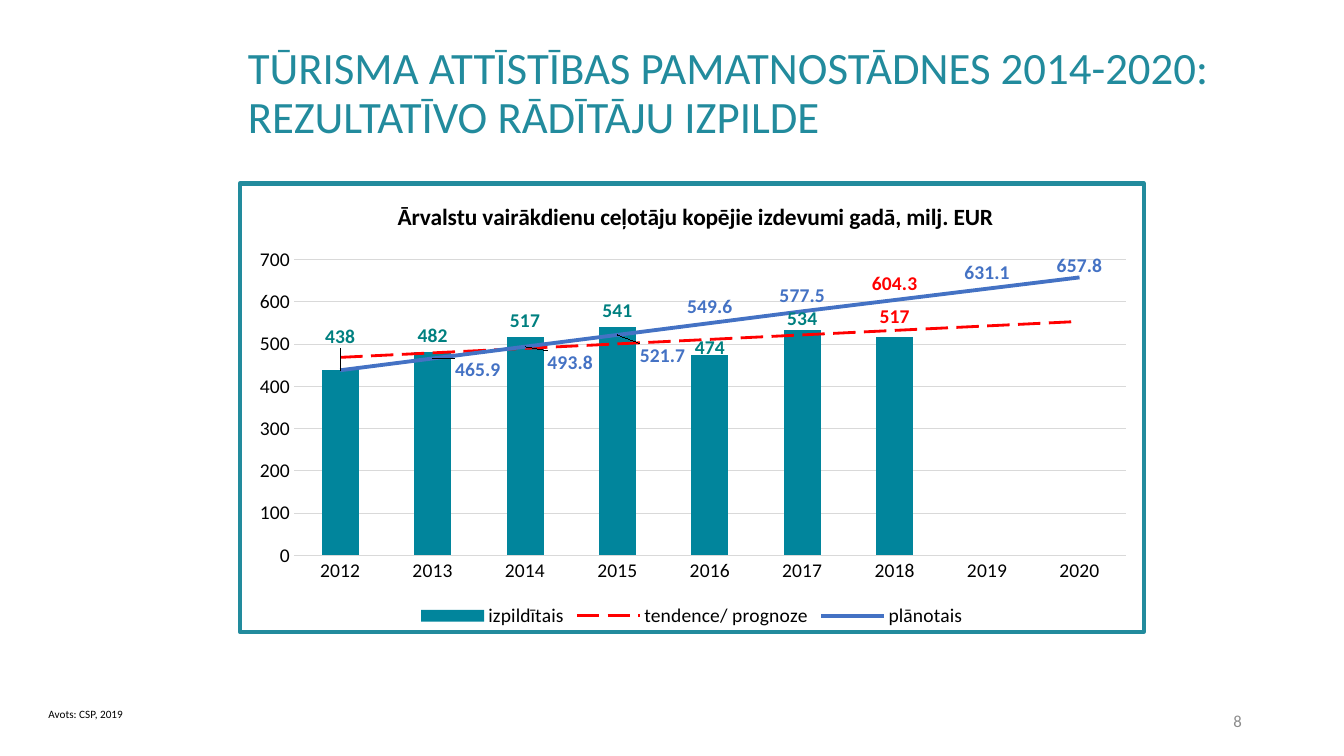
from dataclasses import dataclass

from lxml import etree
from pptx import Presentation
from pptx import util as u
from pptx.chart.data import CategoryChartData
from pptx.dml.color import RGBColor
from pptx.enum import chart as ch, dml, text
from pptx.oxml import parse_xml
from pptx.oxml.ns import nsdecls, qn

TEAL, GREEN, RED, BLUE, GRID = "228B9D", "008080", "FF0000", "4472C4", "D9D9D9"
ABOVE, BELOW = ch.XL_LABEL_POSITION.ABOVE, ch.XL_LABEL_POSITION.BELOW
OUTER = ch.XL_LABEL_POSITION.OUTSIDE_END


@dataclass
class Box:
    left: float
    top: float
    width: float
    height: float

    def cm(self) -> list:
        return [u.Cm(n) for n in (self.left, self.top, self.width, self.height)]


@dataclass
class Note:
    words: str
    box: Box
    size: float
    color: str
    align: text.PP_ALIGN
    anchor: text.MSO_ANCHOR


@dataclass
class Label:
    point: int
    place: ch.XL_LABEL_POSITION
    color: str
    dx: float = 0
    dy: float = 0


def rgb(code: str) -> RGBColor:
    return RGBColor.from_string(code)


def style(font, size: float, color: str, bold: bool = False) -> None:
    font.name, font.size, font.bold = "Calibri", u.Pt(size), bold
    font.color.rgb = rgb(color)


def write(frame, words: str, *, size: float, color: str, bold: bool = False,
          align=text.PP_ALIGN.LEFT, anchor=text.MSO_ANCHOR.TOP,
          space: float = 1.0) -> None:
    frame.word_wrap = True
    frame.auto_size = text.MSO_AUTO_SIZE.NONE
    frame.vertical_anchor = anchor
    para = frame.paragraphs[0]
    para.text, para.alignment, para.line_spacing = words, align, space
    for run in para.runs:
        style(run.font, size, color, bold)


def layout(x: float, y: float, w: float = 0, h: float = 0,
           mode: str = "") -> etree.ElementBase:
    inner = '<c:layoutTarget val="inner"/>' if w else ""
    modes = "".join(f'<c:{a}Mode val="{mode}"/>' for a in "xy") if mode else ""
    size = f'<c:w val="{w}"/><c:h val="{h}"/>' if w else ""
    return parse_xml(
        f'<c:layout {nsdecls("c")}><c:manualLayout>{inner}{modes}'
        f'<c:x val="{x}"/><c:y val="{y}"/>{size}</c:manualLayout></c:layout>')


def clear(node, tag: str) -> None:
    for child in node.findall(qn(tag)):
        node.remove(child)


def mark(series, labels: list[Label]) -> None:
    for item in labels:
        label = series.points[item.point].data_label
        style(label.font, 14, item.color, True)
        label.position = item.place
        if item.dx or item.dy:
            node = next(n for n in series.data_labels._element.findall(qn("c:dLbl"))
                        if n.find(qn("c:idx")).get("val") == str(item.point))
            node.insert(1, layout(item.dx, item.dy))


def trend(series) -> None:
    node = parse_xml(
        f'<c:trendline {nsdecls("c", "a")}><c:name>tendence/ prognoze</c:name>'
        f'<c:spPr><a:ln w="25400"><a:solidFill><a:srgbClr val="{RED}"/></a:solidFill>'
        '<a:prstDash val="lgDash"/></a:ln></c:spPr><c:trendlineType val="linear"/>'
        '<c:dispRSqr val="0"/><c:dispEq val="0"/></c:trendline>')
    series._element.find(qn("c:cat")).addprevious(node)


def split(chart) -> None:
    """Move the second series from the columns to a line plot."""
    bars = chart._chartSpace.find(".//" + qn("c:barChart"))
    line = parse_xml(
        f'<c:lineChart {nsdecls("c")}><c:grouping val="standard"/>'
        '<c:varyColors val="0"/><c:marker val="1"/></c:lineChart>')
    plan = bars.findall(qn("c:ser"))[1]
    clear(plan, "c:invertIfNegative")
    line.insert(2, plan)
    for axis in bars.findall(qn("c:axId")):
        etree.SubElement(line, qn("c:axId")).set("val", axis.get("val"))
    bars.addnext(line)


def draw(slide, box: Box) -> None:
    data = CategoryChartData()
    data.categories = [str(year) for year in range(2012, 2021)]
    data.add_series("izpildītais", [438, 482, 517, 541, 474, 534, 517, None, None])
    data.add_series("plānotais", [438, 465.9, 493.8, 521.7, 549.6, 577.5,
                                  604.3, 631.1, 657.8])
    chart = slide.shapes.add_chart(ch.XL_CHART_TYPE.COLUMN_CLUSTERED,
                                   *box.cm(), data).chart
    style(chart.font, 14, "000000")
    split(chart)

    # Title, legend and frame
    write(chart.chart_title.text_frame,
          "Ārvalstu vairākdienu ceļotāju kopējie izdevumi gadā, milj. EUR",
          size=16.8, color="000000", bold=True, align=text.PP_ALIGN.CENTER)
    head = chart.chart_title._element
    clear(head, "c:layout")
    head.find(qn("c:tx")).addnext(layout(0.17, 0.03, mode="edge"))
    chart.has_legend = True
    chart.legend.position = ch.XL_LEGEND_POSITION.BOTTOM
    chart.legend.include_in_layout = False
    style(chart.legend.font, 14, "000000")
    area = chart._chartSpace.find(".//" + qn("c:plotArea"))
    clear(area, "c:layout")
    area.insert(0, layout(0.06, 0.17, 0.92, 0.66, "edge"))
    chart._chartSpace.find(qn("c:chart")).addnext(parse_xml(
        f'<c:spPr {nsdecls("c", "a")}><a:noFill/><a:ln w="38100"><a:solidFill>'
        f'<a:srgbClr val="{TEAL}"/></a:solidFill></a:ln></c:spPr>'))

    # Axes
    cats, vals = chart.category_axis, chart.value_axis
    for axis in (cats, vals):
        axis.major_tick_mark = axis.minor_tick_mark = ch.XL_TICK_MARK.NONE
        style(axis.tick_labels.font, 14, "000000")
    cats.format.line.color.rgb = rgb(GRID)
    cats.format.line.width = u.Pt(1)
    vals.format.line.fill.background()
    vals.minimum_scale, vals.maximum_scale, vals.major_unit = 0, 700, 100
    vals.tick_labels.number_format = "#,##0"
    vals.tick_labels.number_format_is_linked = False
    grid = vals.major_gridlines.format.line
    grid.color.rgb, grid.width = rgb(GRID), u.Pt(0.75)

    # Columns with their trend
    bars = chart.plots[0]
    bars.gap_width, bars.vary_by_categories = 150, False
    done, plan = bars.series[0], chart.plots[1].series[0]
    done.format.fill.solid()
    done.format.fill.fore_color.rgb = rgb("01859C")
    tags = done.data_labels
    tags.show_value, tags.position = True, OUTER
    style(tags.font, 14, GREEN, True)
    mark(done, [Label(0, OUTER, GREEN, 0, -0.04), Label(4, OUTER, GREEN, 0, 0.02),
                Label(5, OUTER, GREEN, 0, 0.01), Label(6, OUTER, RED, 0, -0.01)])
    trend(done)

    # Planned line: early labels sit in the gaps between columns
    plan.smooth = False
    plan.marker.style = ch.XL_MARKER_STYLE.NONE
    plan.format.line.color.rgb = rgb(BLUE)
    plan.format.line.width = u.Pt(2.75)
    plan.format.line.dash_style = dml.MSO_LINE.SOLID
    plan.data_labels.show_value = False
    mark(plan, [Label(1, BELOW, BLUE, 0.05, -0.01), Label(2, BELOW, BLUE, 0.05),
                Label(3, BELOW, BLUE, 0.05, 0.01), Label(4, ABOVE, BLUE),
                Label(5, ABOVE, BLUE), Label(6, ABOVE, RED),
                Label(7, ABOVE, BLUE), Label(8, ABOVE, BLUE, 0, 0.01)])


def main() -> None:
    deck = Presentation()
    deck.slide_width, deck.slide_height = u.Cm(33.87), u.Cm(19.05)
    slide = deck.slides.add_slide(deck.slide_layouts[5])

    # Title
    title = slide.shapes.title
    title.left, title.top, title.width, title.height = Box(5.99, 0.05, 27.66, 3.68).cm()
    write(title.text_frame,
          "TŪRISMA ATTĪSTĪBAS PAMATNOSTĀDNES 2014-2020:\vREZULTATĪVO RĀDĪTĀJU IZPILDE",
          size=32, color=TEAL, anchor=text.MSO_ANCHOR.BOTTOM, space=0.9)

    draw(slide, Box(5.99, 4.57, 22.89, 11.4))

    # Source and page number
    for note in (
        Note("Avots: CSP, 2019", Box(0.97, 17.7, 4.06, 0.61), 8, "000000",
             text.PP_ALIGN.LEFT, text.MSO_ANCHOR.TOP),
        Note("8", Box(23.93, 17.65, 7.62, 1.02), 12, "8C8C8C",
             text.PP_ALIGN.RIGHT, text.MSO_ANCHOR.MIDDLE),
    ):
        frame = slide.shapes.add_textbox(*note.box.cm()).text_frame
        write(frame, note.words, size=note.size, color=note.color,
              align=note.align, anchor=note.anchor)

    deck.save("out.pptx")


if __name__ == "__main__":
    main()
